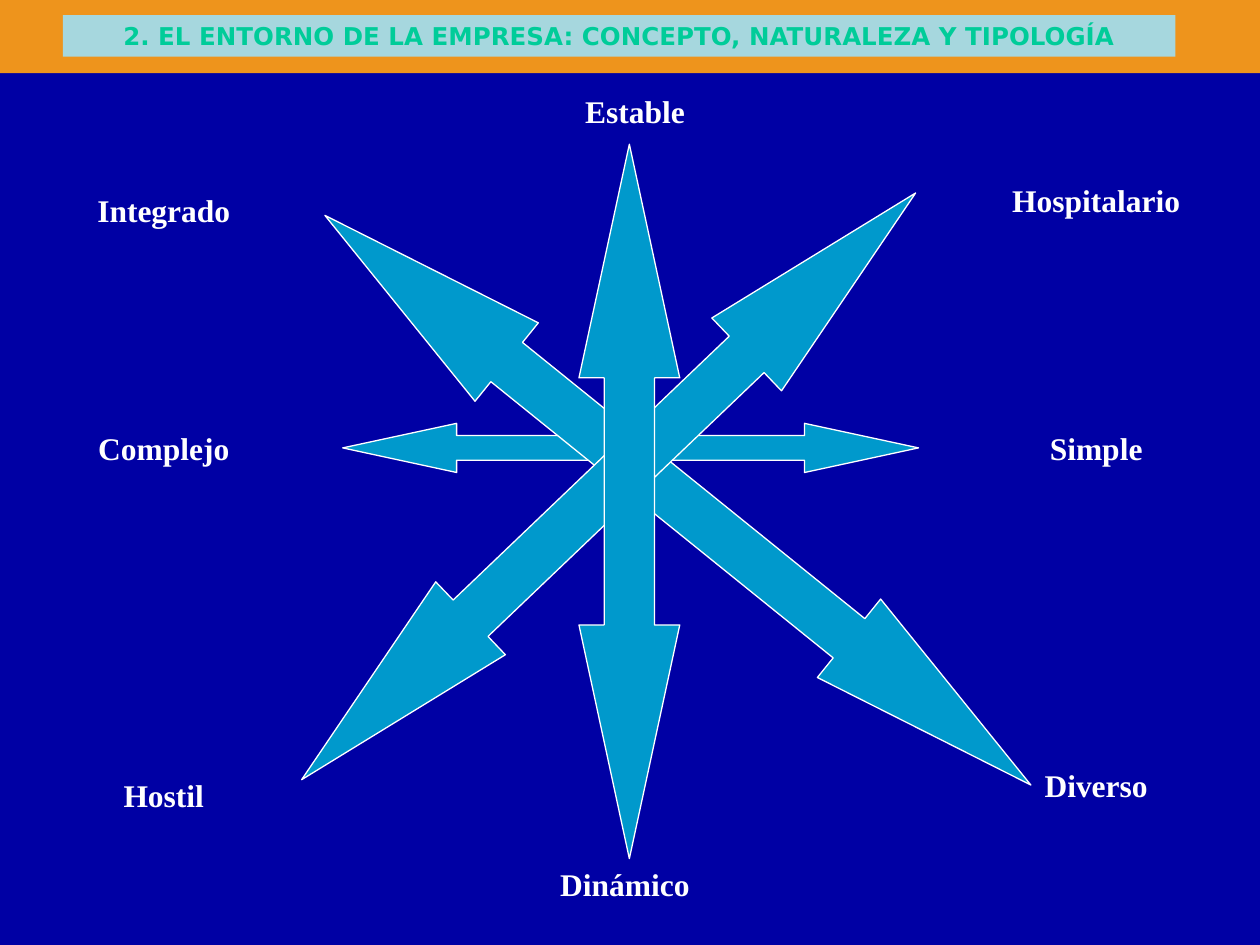
from pptx import Presentation
from pptx.dml.color import RGBColor
from pptx.enum import shapes, text
from pptx.util import Inches, Pt

NAVY, ORANGE, PALE_BLUE = "0000A4", "EE941C", "A6D7DE"
GREEN, BLUE, WHITE = "00CC99", "0099CC", "FFFFFF"

LABEL_WIDTH, LABEL_HEIGHT = 2.6, 0.4
LEFT_COLUMN, RIGHT_COLUMN = 0, 10 - LABEL_WIDTH

LABELS = [
    ("Estable", 3.74, 0.68),
    ("Dinámico", 3.66, 6.82),
    ("Hospitalario", RIGHT_COLUMN, 1.39),
    ("Integrado", LEFT_COLUMN, 1.47),
    ("Diverso", RIGHT_COLUMN, 6.03),
    ("Hostil", LEFT_COLUMN, 6.11),
    ("Simple", RIGHT_COLUMN, 3.36),
    ("Complejo", LEFT_COLUMN, 3.36),
]

# Box (left, top, width, height) and rotation of each axis, back to front
AXES = [
    ((2.72, 3.36, 4.57, 0.39), 0),      # Complejo - Simple
    ((1.78, 3.57, 7.2, 0.8), 38.9),     # Integrado - Diverso
    ((1.46, 3.46, 6.74, 0.8), 136.3),   # Hospitalario - Hostil
    ((2.16, 3.58, 5.67, 0.8), 90),      # Estable - Dinámico
]


def paint(fill, color):
    fill.solid()
    fill.fore_color.rgb = RGBColor.from_string(color)


def add_caption(slide, box, wording, fill, font_name, size, color):
    caption = slide.shapes.add_textbox(*map(Inches, box))
    paint(caption.fill, fill)
    frame = caption.text_frame
    frame.word_wrap = True
    frame.auto_size = text.MSO_AUTO_SIZE.SHAPE_TO_FIT_TEXT
    paragraph = frame.paragraphs[0]
    paragraph.text = wording
    paragraph.alignment = text.PP_ALIGN.CENTER
    font = paragraph.font
    font.name, font.size, font.bold = font_name, Pt(size), True
    font.color.rgb = RGBColor.from_string(color)


def add_header(slide, left, top, width, height):
    band = slide.shapes.add_shape(
        shapes.MSO_SHAPE.RECTANGLE, *map(Inches, (left, top, width, height)))
    band.shadow.inherit = False
    paint(band.fill, ORANGE)
    band.line.fill.background()
    add_caption(slide, (left + 0.5, top + 0.12, width - 1.17, 0.33),
                "2. EL ENTORNO DE LA EMPRESA: CONCEPTO, NATURALEZA Y TIPOLOGÍA",
                PALE_BLUE, "DejaVu Sans", 14, GREEN)


def add_axis(slide, box, rotation):
    axis = slide.shapes.add_shape(
        shapes.MSO_SHAPE.LEFT_RIGHT_ARROW, *map(Inches, box))
    axis.shadow.inherit = False
    axis.adjustments[0] = 0.5
    axis.adjustments[1] = 2.318
    axis.rotation = rotation
    paint(axis.fill, BLUE)
    paint(axis.line.fill, WHITE)
    axis.line.width = Pt(0.75)


def add_compass(slide, left, top):
    """Place the environment types around their four crossing axes."""
    for wording, x, y in LABELS:
        add_caption(slide, (left + x, top + y, LABEL_WIDTH, LABEL_HEIGHT),
                    wording, NAVY, "Times New Roman", 18, WHITE)
    for (x, y, width, height), rotation in AXES:
        add_axis(slide, (left + x, top + y, width, height), rotation)


def main():
    deck = Presentation()
    deck.slide_width, deck.slide_height = Inches(10), Inches(7.5)
    slide = deck.slides.add_slide(deck.slide_layouts[6])
    paint(slide.background.fill, NAVY)
    add_header(slide, 0, 0, 10, 0.58)
    add_compass(slide, 0, 0)
    deck.save("out.pptx")


if __name__ == "__main__":
    main()
